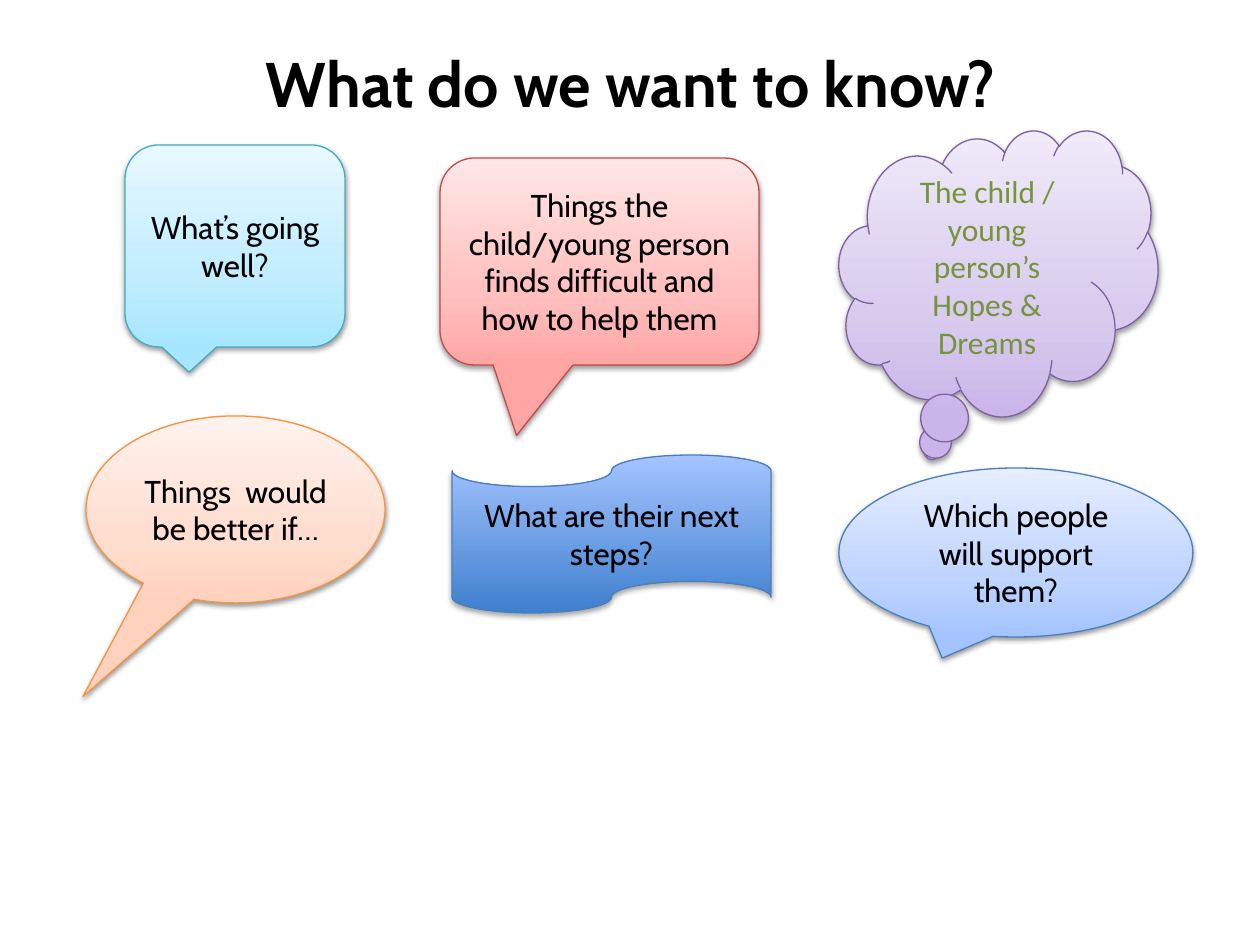
from copy import deepcopy
from dataclasses import dataclass

from pptx import Presentation
from pptx.dml.color import RGBColor
from pptx.enum.shapes import MSO_SHAPE as Shape
from pptx.enum.text import MSO_ANCHOR as Anchor, PP_ALIGN as Align
from pptx.oxml import parse_xml
from pptx.oxml.ns import nsdecls, qn
from pptx.util import Emu, Pt

EMU_PER_PX = 914400 / 126

BLACK = RGBColor(0x00, 0x00, 0x00)
GREEN = RGBColor(0x77, 0x93, 0x3C)


@dataclass(frozen=True)
class Palette:
    line: RGBColor
    stops: tuple[tuple[float, RGBColor], ...]


def palette(line: str, *colors: str) -> Palette:
    """Pair an outline with a gradient that runs from bottom to top."""
    places = (0, 0.35, 1) if len(colors) == 3 else (0, 1)
    rgbs = (RGBColor.from_string(c) for c in colors)
    return Palette(RGBColor.from_string(line), tuple(zip(places, rgbs)))


AQUA = palette("46AAC5", "A7E6FF", "C1EDFF", "E7F8FF")
PURPLE = palette("7D60A0", "C9B5E8", "D8CBEE", "F0EAF9")
ORANGE = palette("F69240", "FFD2BD", "FFDED0", "FFF2ED")
BLUE = palette("4B7EBC", "A4C4FF", "BFD4FF", "E6EEFF")
RED = palette("BF4C48", "FFA6A5", "FFC0BF", "FFE7E7")
DEEP_BLUE = palette("4B7EBC", "3F80CE", "A4C4FF")


@dataclass(frozen=True)
class Bubble:
    kind: Shape
    box: tuple[int, int, int, int]  # left, top, width, height in px
    palette: Palette
    lines: tuple[str, ...]
    tail: tuple[float, ...] = ()
    font: str = "Cabin"
    color: RGBColor = BLACK
    shadow_alpha: int = 38


BUBBLES = (
    Bubble(Shape.ROUNDED_RECTANGULAR_CALLOUT, (125, 145, 220, 202), AQUA,
           ("What’s going well?",)),
    Bubble(Shape.CLOUD_CALLOUT, (839, 130, 319, 286), PURPLE,
           ("The child / young person’s", "Hopes & Dreams"),
           font="Calibri", color=GREEN),
    Bubble(Shape.OVAL_CALLOUT, (86, 416, 299, 187), ORANGE,
           ("Things  would be better if…",), tail=(-0.51, 1)),
    Bubble(Shape.OVAL_CALLOUT, (839, 468, 354, 169), BLUE,
           ("Which people will support them?",)),
    Bubble(Shape.ROUNDED_RECTANGULAR_CALLOUT, (440, 158, 319, 207), RED,
           ("Things the child/young person finds difficult and how to help them",),
           tail=(-0.26, 0.84)),
    Bubble(Shape.FLOWCHART_PUNCHED_TAPE, (452, 455, 319, 158), DEEP_BLUE,
           ("What are their next steps?",), shadow_alpha=35),
)


def px(n: int) -> Emu:
    return Emu(round(n * EMU_PER_PX))


def write(tf, lines: tuple[str, ...], font: str, size: int, color: RGBColor,
          bold: bool = False) -> None:
    tf.word_wrap = True
    tf.vertical_anchor = Anchor.MIDDLE
    tf.text = "\n".join(lines)
    for p in tf.paragraphs:
        p.alignment = Align.CENTER
        p.font.name = font
        p.font.size = Pt(size)
        p.font.bold = bold
        p.font.color.rgb = color


def paint(sp, colors: Palette) -> None:
    sp.fill.gradient()
    sp.fill.gradient_angle = 90
    # A new gradient has two stops; add the ones that are missing
    stop_list = sp._element.spPr.find(".//" + qn("a:gsLst"))
    while len(stop_list) < len(colors.stops):
        stop_list.append(deepcopy(stop_list[0]))
    for stop, (place, rgb) in zip(sp.fill.gradient_stops, colors.stops):
        stop.position = place
        stop.color.rgb = rgb
    sp.line.color.rgb = colors.line
    sp.line.width = Pt(0.75)


def cast_shadow(sp, alpha: int) -> None:
    sp._element.spPr.append(parse_xml(
        f'<a:effectLst {nsdecls("a")}>'
        f'<a:outerShdw blurRad="{Pt(3.1)}" dist="{Pt(1.6)}" dir="5400000" '
        'rotWithShape="0"><a:srgbClr val="000000">'
        f'<a:alpha val="{alpha * 1000}"/></a:srgbClr></a:outerShdw></a:effectLst>'))


def add_bubble(slide, bubble: Bubble) -> None:
    sp = slide.shapes.add_shape(bubble.kind, *map(px, bubble.box))
    for i, value in enumerate(bubble.tail):
        sp.adjustments[i] = value
    paint(sp, bubble.palette)
    cast_shadow(sp, bubble.shadow_alpha)
    write(sp.text_frame, bubble.lines, bubble.font, 18, bubble.color)


def main() -> None:
    prs = Presentation()
    prs.slide_width, prs.slide_height = px(1260), px(945)
    slide = prs.slides.add_slide(prs.slide_layouts[5])

    # Title
    title = slide.shapes.title
    title.left, title.top, title.width, title.height = map(px, (218, 20, 825, 125))
    write(title.text_frame, ("What do we want to know?",), "Cabin", 36, BLACK, bold=True)

    # Speech bubbles
    for bubble in BUBBLES:
        add_bubble(slide, bubble)

    prs.save("out.pptx")


if __name__ == "__main__":
    main()
